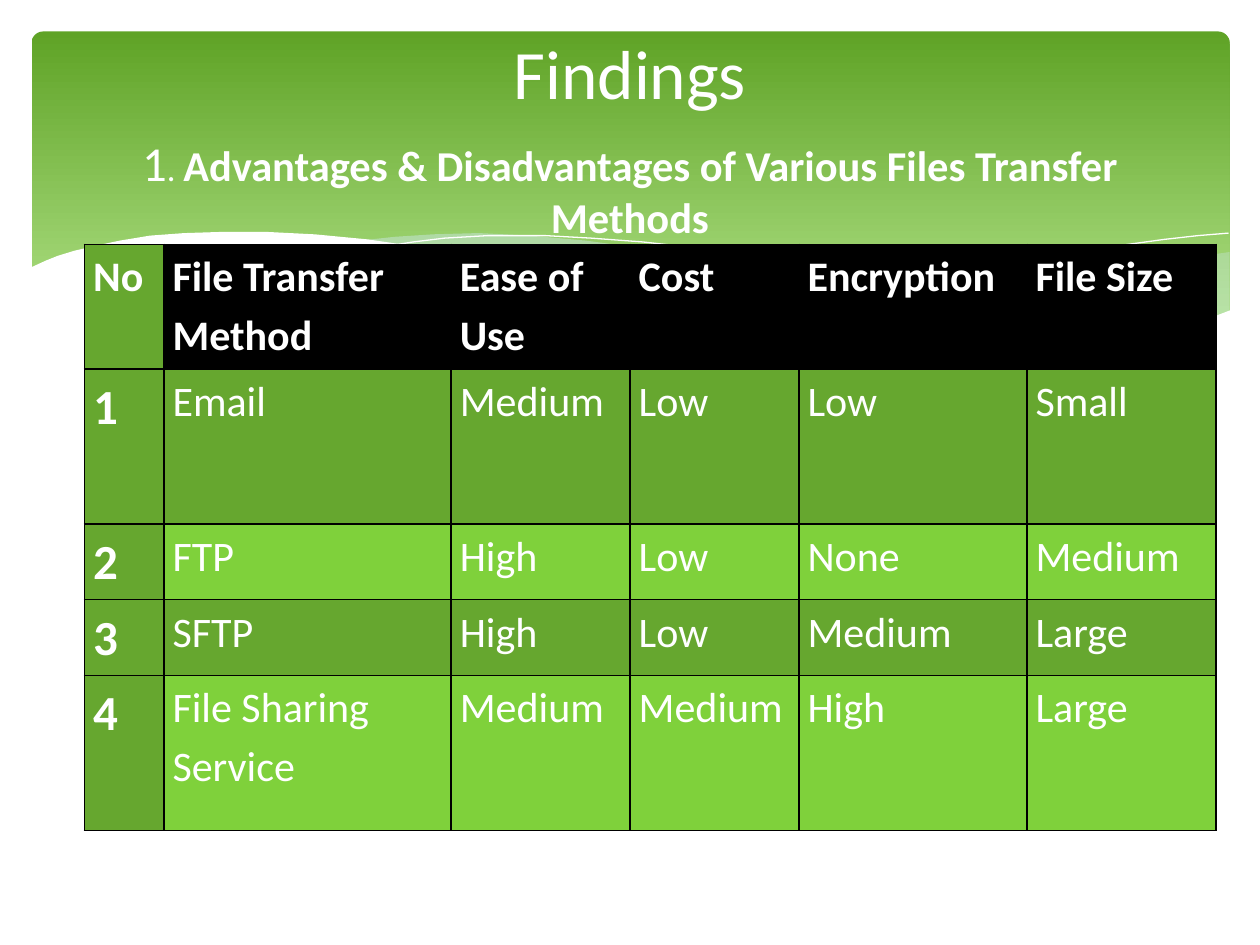
"""Build the Findings slide comparing file transfer methods."""
from lxml.etree import SubElement
from pptx import Presentation
from pptx.dml.color import RGBColor
from pptx.enum.shapes import MSO_SHAPE as SHAPE
from pptx.enum.text import MSO_ANCHOR as ANCHOR, PP_ALIGN as ALIGN
from pptx.oxml.ns import qn
from pptx.util import Inches, Pt

WHITE, BLACK, DARK, LIGHT, MIST = "FFFFFF", "000000", "66A72F", "7FD13B", "D6ECFF"

RIGHT_SWELL = [
    (9.76, 2), (9.48, 2.04), (9.06, 2.13), (8.61, 2.23), (8.05, 2.37), (7.53, 2.48),
    (7.06, 2.57), (6.61, 2.65), (6.91, 2.69), (7.32, 2.74), (7.69, 2.77), (8.14, 2.78),
    (8.54, 2.76), (8.89, 2.72), (9.21, 2.65), (9.49, 2.57), (9.76, 2.47)]
MIDDLE_SWELL = [
    (8.93, 2.73), (8.37, 2.65), (7.75, 2.54), (7.06, 2.4), (6.29, 2.22), (5.84, 2.11),
    (5.41, 2.03), (5.02, 1.96), (4.65, 1.91), (4.2, 1.87), (3.8, 1.85), (3.44, 1.86),
    (3.13, 1.88), (2.86, 1.91), (3.23, 1.96), (3.62, 2.03), (4.04, 2.11), (4.49, 2.22),
    (5.3, 2.4), (6.01, 2.55), (6.5, 2.64), (6.95, 2.7), (7.36, 2.75), (7.85, 2.78),
    (8.38, 2.78), (8.67, 2.76)]
LONG_CREST = [
    (3.09, 1.95), (3.28, 1.92), (3.53, 1.89), (3.87, 1.87), (4.33, 1.87), (4.69, 1.89),
    (5.1, 1.92), (5.56, 1.97), (6.08, 2.04), (6.65, 2.13), (7.27, 2.26), (7.95, 2.41),
    (8.69, 2.61), (9.07, 2.72)]
SHORT_CREST = [
    (6.13, 2.57), (6.53, 2.46), (6.95, 2.35), (7.48, 2.23), (8.06, 2.1), (8.66, 1.99),
    (8.95, 1.94), (9.24, 1.9), (9.51, 1.87), (9.75, 1.85)]
FRONT_WAVE = [
    (9.77, 2.46), (9.59, 2.53), (9.3, 2.62), (8.99, 2.69), (8.63, 2.74), (8.09, 2.77),
    (7.61, 2.75), (7.08, 2.7), (6.48, 2.62), (5.79, 2.5), (5.03, 2.33), (4.47, 2.2),
    (3.91, 2.07), (3.4, 1.97), (2.92, 1.9), (2.5, 1.86), (2.11, 1.84), (1.77, 1.84),
    (1.46, 1.85), (1.19, 1.87), (0.95, 1.91), (0.76, 1.95), (0.59, 1.99), (0.46, 2.03),
    (0.36, 2.07), (0.23, 2.13), (0.23, 3.29), (9.77, 3.29)]

COLS = [0.63, 2.28, 1.42, 1.34, 1.81, 1.5]
ROWS = [0.99, 1.23, 0.6, 0.6, 1.23]
METHODS = [
    ["No", "File Transfer Method", "Ease of Use", "Cost", "Encryption", "File Size"],
    ["1", "Email", "Medium", "Low", "Low", "Small"],
    ["2", "FTP", "High", "Low", "None", "Medium"],
    ["3", "SFTP", "High", "Low", "Medium", "Large"],
    ["4", "File Sharing Service", "Medium", "Medium", "High", "Large"]]


def rgb(value):
    return RGBColor.from_string(value)


class Deck:
    def __init__(self, slide, font="Calibri"):
        self.s, self.font = slide, font

    def style(self, p, size, bold=False):
        f = p.font
        f.name, f.size, f.bold = self.font, Pt(size), bold
        f.color.rgb = rgb(WHITE)

    def banner(self, x, y, w, h, top, bottom):
        sp = self.s.shapes.add_shape(SHAPE.ROUNDED_RECTANGLE, *map(Inches, (x, y, w, h)))
        sp.adjustments[0] = 0.034
        sp.shadow.inherit = False
        sp.line.fill.background()
        sp.fill.gradient()
        sp.fill.gradient_angle = 270
        for stop, color, pos in zip(sp.fill.gradient_stops, (top, bottom), (0, 0.9)):
            stop.color.rgb, stop.position = rgb(color), pos

    def outline(self, points, closed):
        pts = [(Inches(x), Inches(y)) for x, y in points]
        fb = self.s.shapes.build_freeform(*pts[0])
        fb.add_line_segments(pts[1:], close=closed)
        sp = fb.convert_to_shape()
        sp.shadow.inherit = False
        return sp

    def wave(self, points, color, alpha=100):
        sp = self.outline(points, True)
        sp.line.fill.background()
        sp.fill.solid()
        sp.fill.fore_color.rgb = rgb(color)
        if alpha < 100:
            clr = sp.fill._xPr.find(qn("a:solidFill"))[0]
            SubElement(clr, qn("a:alpha"), val=str(alpha * 1000))

    def crest(self, points, color):
        sp = self.outline(points, False)
        sp.fill.background()
        sp.line.color.rgb = rgb(color)
        sp.line.width = 0

    def title(self, x, y, w, h, heading, size, runs):
        tf = self.s.shapes.add_textbox(*map(Inches, (x, y, w, h))).text_frame
        tf.word_wrap, tf.vertical_anchor = True, ANCHOR.MIDDLE
        tf.margin_top = Inches(0.1)
        p = tf.paragraphs[0]
        p.text, p.alignment = heading, ALIGN.CENTER
        self.style(p, size)
        p = tf.add_paragraph()
        p.alignment, p.space_before = ALIGN.CENTER, Pt(11)
        self.style(p, size)
        for text, run_size, bold in runs:
            r = p.add_run()
            r.text, r.font.size, r.font.bold = text, Pt(run_size), bold

    def cell(self, cell, text, fill, size, bold):
        cell.margin_left = cell.margin_right = Inches(0.07)
        cell.margin_top = cell.margin_bottom = 0
        for side in ("lnL", "lnR", "lnT", "lnB"):
            ln = SubElement(cell._tc.get_or_add_tcPr(), qn("a:" + side), w=str(Pt(1)))
            SubElement(SubElement(ln, qn("a:solidFill")), qn("a:srgbClr"), val=BLACK)
        cell.fill.solid()
        cell.fill.fore_color.rgb = rgb(fill)
        p = cell.text_frame.paragraphs[0]
        p.text, p.line_spacing, p.space_after = text, 1.15, Pt(10)
        self.style(p, size, bold)

    def table(self, x, y, cols, rows, data):
        box = map(Inches, (x, y, sum(cols), sum(rows)))
        t = self.s.shapes.add_table(len(rows), len(cols), *box).table
        for col, w in zip(t.columns, cols):
            col.width = Inches(w)
        for i, (row, h) in enumerate(zip(t.rows, rows)):
            row.height = Inches(h)
            for j, text in enumerate(data[i]):
                if j == 0:
                    fill = DARK
                elif i == 0:
                    fill = BLACK
                else:
                    fill = DARK if i % 2 else LIGHT
                size = 28 if i and j == 0 else 24
                self.cell(t.cell(i, j), text, fill, size, i == 0 or j == 0)


def main():
    prs = Presentation()
    prs.slide_width, prs.slide_height = Inches(10), Inches(7.5)
    d = Deck(prs.slides.add_slide(prs.slide_layouts[6]))
    d.banner(0.25, 0.25, 9.51, 2.7, "5FA326", "B2E389")
    d.wave(RIGHT_SWELL, MIST, 29)
    d.wave(MIDDLE_SWELL, MIST, 40)
    d.crest(LONG_CREST, WHITE)
    d.crest(SHORT_CREST, WHITE)
    d.wave(FRONT_WAVE, WHITE)
    d.title(0.5, 0.37, 9, 1.37, "Findings", 39.6, [
        ("1", 27.9, False), (". ", 19.8, False),
        ("Advantages & Disadvantages of Various Files Transfer Methods", 24.3, True)])
    d.table(0.67, 1.94, COLS, ROWS, METHODS)
    prs.save("out.pptx")


if __name__ == "__main__":
    main()
